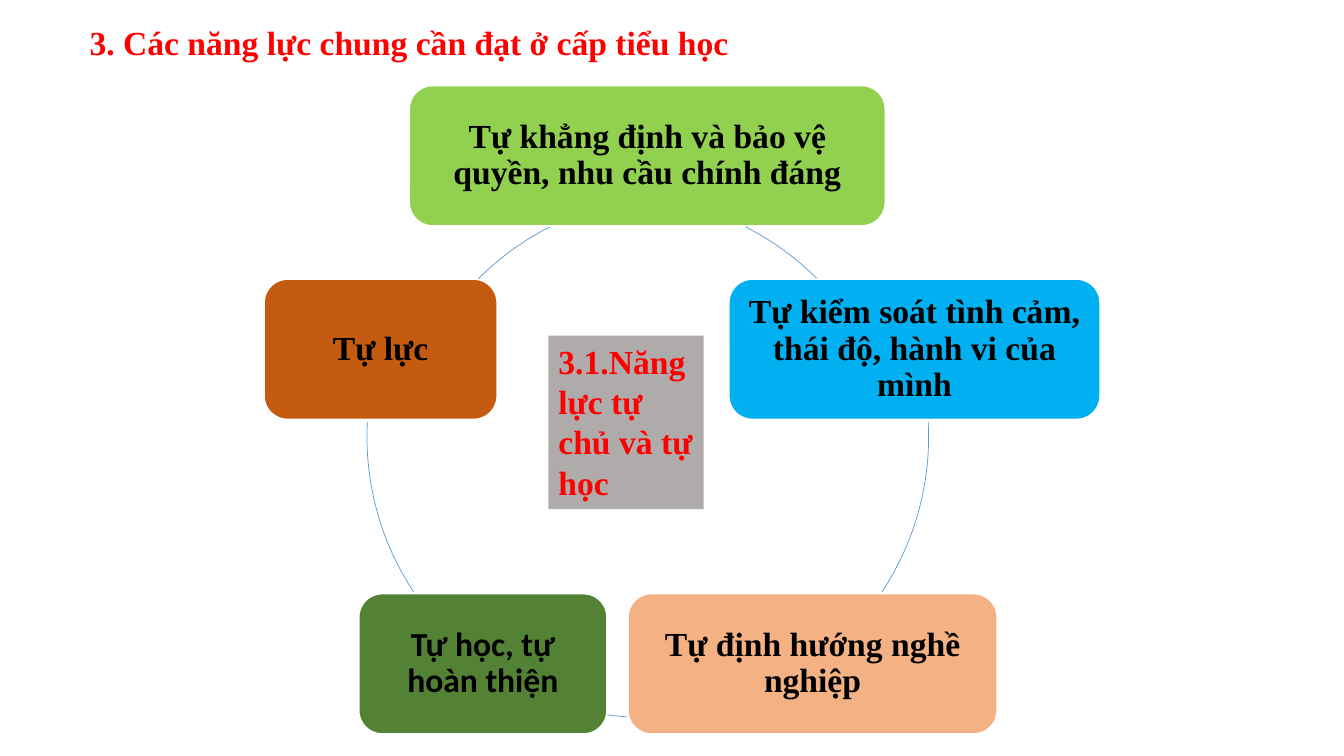
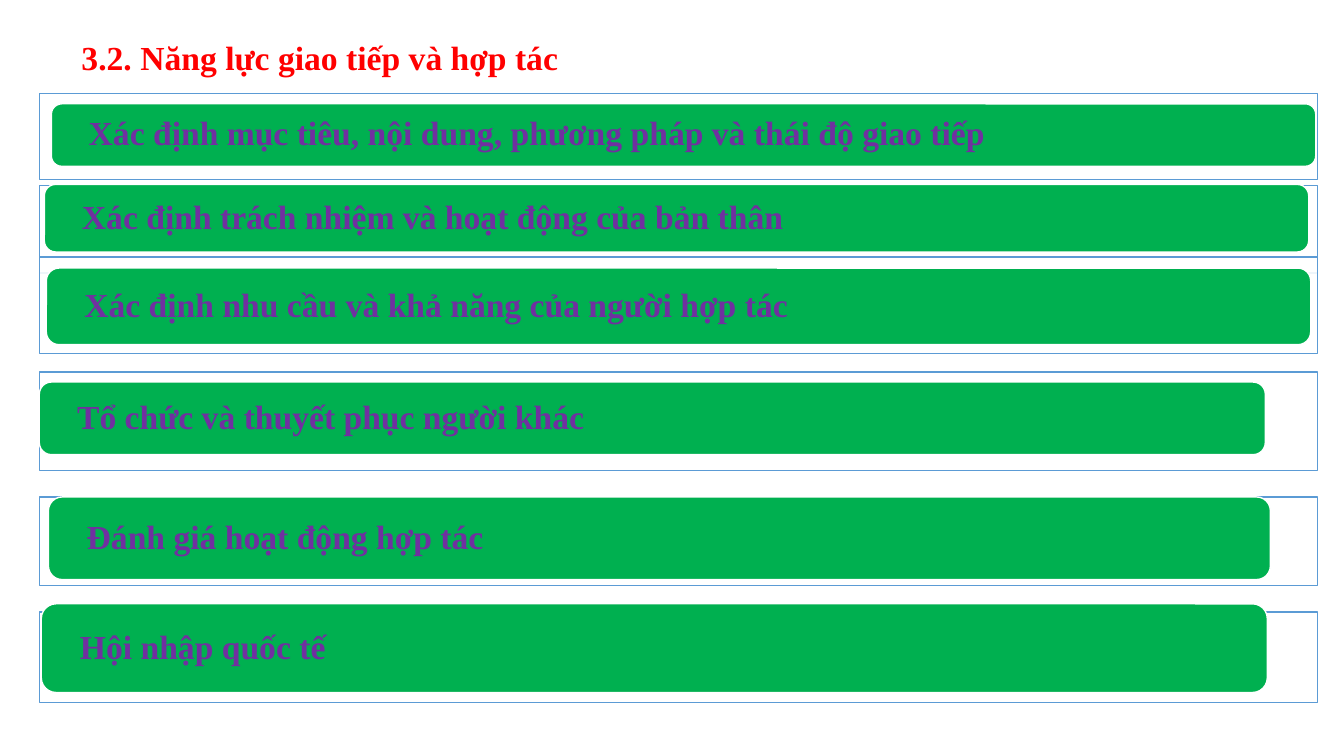
from pptx import Presentation
from pptx.dml.color import RGBColor
from pptx.enum.shapes import MSO_SHAPE as SHAPE
from pptx.enum.text import MSO_ANCHOR as ANCHOR, MSO_AUTO_SIZE as AUTO, PP_ALIGN as ALIGN
from pptx.oxml.ns import qn
from pptx.util import Inches, Pt
from lxml.etree import SubElement

SERIF, SANS = "Times New Roman", "Calibri"
RED, BLACK, WHITE, PURPLE = "FF0000", "000000", "FFFFFF", "7030A0"
BLUE, GREEN, GRAY = "5B9BD5", "00B050", "AFABAB"

NODE_H = 1.39
NODES = [
    ("Tự khẳng định và bảo vệ quyền, nhu cầu chính đáng", 1.44, 0, 4.72, "92D050", SERIF),
    ("Tự kiểm soát tình cảm, thái độ, hành vi của mình", 4.61, 1.92, 3.68, "00B0F0", SERIF),
    ("Tự định hướng nghề nghiệp", 3.61, 5.04, 3.66, "F4B183", SERIF),
    ("Tự học, tự hoàn thiện", 0.94, 5.04, 2.46, "548235", SANS),
    ("Tự lực", 0, 1.92, 2.31, "C55A11", SERIF),
]
CIRCLE = 5.57
ARCS = [
    (0.73, 1.1, 296.9, 315),
    (1.02, 0.7, 357, 33.5),
    (1.02, 0.7, 94.2, 98.4),
    (1.02, 0.7, 146.5, 183),
    (1.31, 1.1, 225, 243.1),
]

FRAME_W = 12.68
BARS = [
    ("Xác định mục tiêu, nội dung, phương pháp và thái độ giao tiếp",
     (0, 0.85), (0.12, 0.1, 12.54, 0.62)),
    ("Xác định trách nhiệm và hoạt động của bản thân",
     (0.91, 0.87), (0.05, 0.9, 12.54, 0.67)),
    ("Xác định nhu cầu và khả năng của người hợp tác",
     (1.62, 0.96), (0.07, 1.73, 12.54, 0.76)),
    ("Tổ chức và thuyết phục người khác",
     (2.76, 0.98), (0, 2.86, 12.16, 0.72)),
    ("Đánh giá hoạt động hợp tác",
     (4, 0.88), (0.09, 4, 12.12, 0.82)),
    ("Hội nhập quốc tế",
     (5.14, 0.9), (0.02, 5.06, 12.16, 0.88)),
]


def rgb(color):
    return RGBColor.from_string(color)


def add_shape(s, kind, box, fill=None, line=None, width=1):
    sp = s.shapes.add_shape(kind, *map(Inches, box))
    sp.shadow.inherit = False
    if fill:
        sp.fill.solid()
        sp.fill.fore_color.rgb = rgb(fill)
    else:
        sp.fill.background()
    if line:
        sp.line.color.rgb = rgb(line)
        sp.line.width = Pt(width)
    else:
        sp.line.fill.background()
    return sp


def write(sp, text, color, font=SERIF, align=ALIGN.LEFT, anchor=ANCHOR.TOP,
          insets=(0.1, 0.05), spacing=1.0):
    tf = sp.text_frame
    tf.word_wrap = True
    tf.vertical_anchor = anchor
    tf.margin_left = tf.margin_right = Inches(insets[0])
    tf.margin_top = tf.margin_bottom = Inches(insets[1])
    p = tf.paragraphs[0]
    p.alignment = align
    p.line_spacing = spacing
    r = p.add_run()
    r.text = text
    r.font.name = font
    r.font.size = Pt(24)
    r.font.bold = True
    r.font.color.rgb = rgb(color)
    return tf


def add_title(s, text, box):
    sp = s.shapes.add_textbox(*map(Inches, box))
    write(sp, text, RED).auto_size = AUTO.SHAPE_TO_FIT_TEXT


def add_cycle(s, x, y):
    for left, top, start, end in ARCS:
        arc = add_shape(s, SHAPE.ARC, (x + left, y + top, CIRCLE, CIRCLE), line=BLUE, width=0.5)
        for i, angle in enumerate((start, end)):
            arc.adjustments[i] = angle * 0.6
    for text, left, top, width, fill, font in NODES:
        node = add_shape(s, SHAPE.ROUNDED_RECTANGLE, (x + left, y + top, width, NODE_H), fill, WHITE)
        write(node, text, BLACK, font, ALIGN.CENTER, ANCHOR.MIDDLE, (0.1, 0.1), 0.9)
    hub = add_shape(s, SHAPE.RECTANGLE, (x + 2.82, y + 2.48, 1.54, 1.72), GRAY)
    write(hub, "3.1.Năng lực tự chủ và tự học", RED).auto_size = AUTO.SHAPE_TO_FIT_TEXT


def add_bar_list(s, x, y):
    for text, (frame_top, frame_h), (left, top, width, height) in BARS:
        frame = add_shape(s, SHAPE.RECTANGLE, (x, y + frame_top, FRAME_W, frame_h), WHITE, BLUE)
        clr = frame.fill._xPr.find(qn("a:solidFill"))[0]
        SubElement(clr, qn("a:alpha")).set("val", "90000")
        bar = add_shape(s, SHAPE.ROUNDED_RECTANGLE, (x + left, y + top, width, height), GREEN, WHITE)
        write(bar, text, PURPLE, anchor=ANCHOR.MIDDLE, insets=(0.34, 0), spacing=0.9)


def main():
    prs = Presentation()
    prs.slide_width, prs.slide_height = Inches(13.33), Inches(7.5)
    blank = prs.slide_layouts[6]

    s = prs.slides.add_slide(blank)
    add_title(s, "3. Các năng lực chung cần đạt ở cấp tiểu học", (0.79, 0.17, 12.04, 0.5))
    add_cycle(s, 2.62, 0.85)

    s = prs.slides.add_slide(blank)
    add_bar_list(s, 0.39, 0.93)
    add_title(s, "3.2. Năng lực giao tiếp và hợp tác", (0.71, 0.32, 11.93, 0.5))

    prs.save("out.pptx")


if __name__ == "__main__":
    main()
